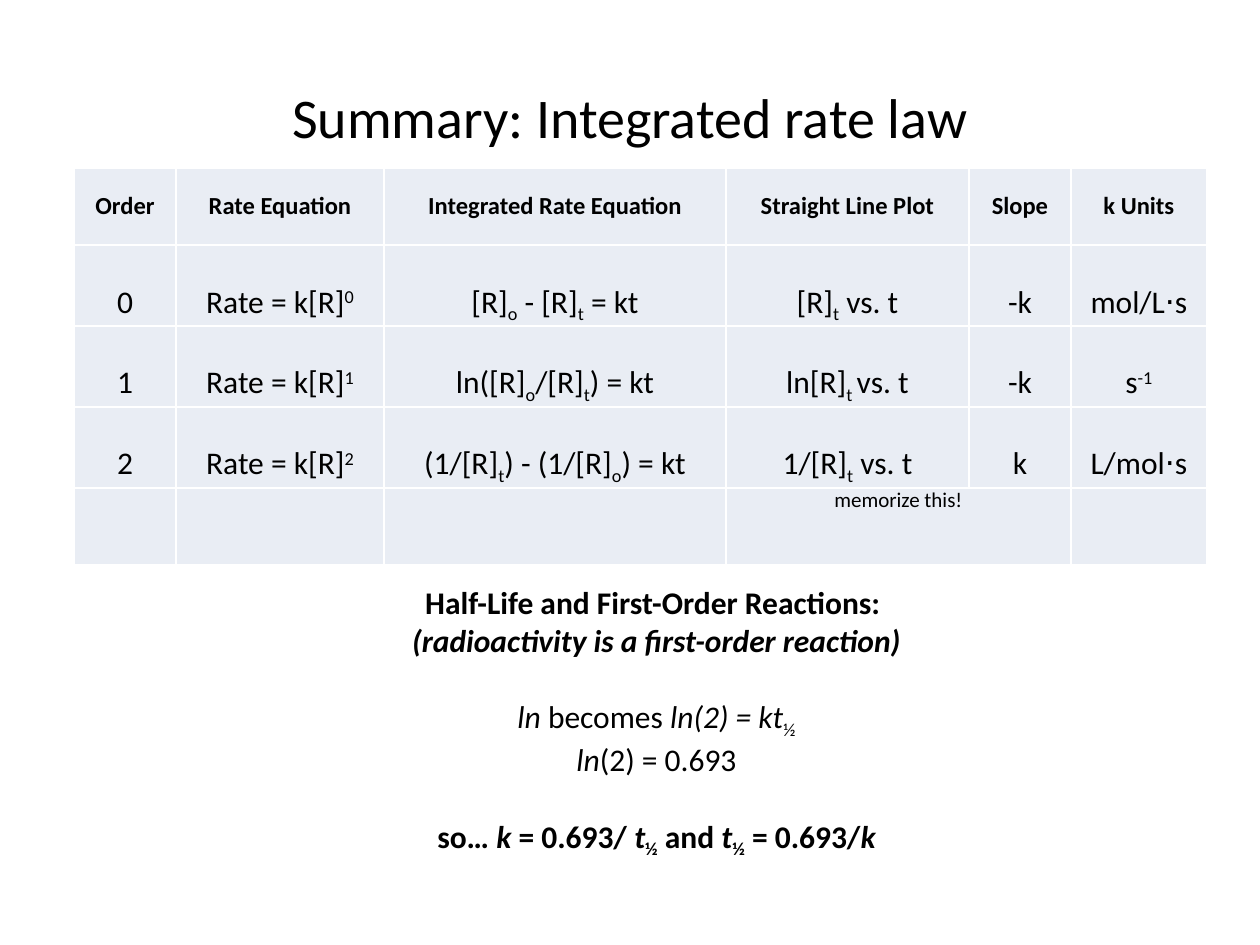
from dataclasses import dataclass
from typing import NamedTuple

from pptx import Presentation
from pptx.dml.color import RGBColor as Rgb
from pptx.enum.text import MSO_ANCHOR as Anchor, PP_ALIGN as Align
from pptx.util import Pt

SCALE = 914400 / 126


@dataclass(frozen=True)
class Theme:
    font: str = "Calibri"
    ink: Rgb = Rgb(0, 0, 0)
    cell: Rgb = Rgb(0xE9, 0xED, 0xF4)
    title: int = 32
    body: int = 18
    head: int = 14
    note: int = 12


class Run(NamedTuple):
    text: str
    shift: int = 0
    slant: bool = False


class Line(NamedTuple):
    runs: list[Run]
    bold: bool = False
    gap: int = 0


THEME = Theme()


def px(n: int) -> int:
    return round(n * SCALE)


def sub(text: str) -> Run:
    return Run(text, -25)


def sup(text: str) -> Run:
    return Run(text, 30)


def it(text: str) -> Run:
    return Run(text, slant=True)


def write(para, runs: list[Run], size: int, bold: bool = False) -> None:
    para.alignment = Align.CENTER
    font = para.font
    font.name, font.size, font.bold = THEME.font, Pt(size), bold
    font.color.rgb = THEME.ink
    for item in runs:
        run = para.add_run()
        run.text = item.text
        if item.slant:
            run.font.italic = True
        if item.shift:
            run.font._element.set("baseline", str(item.shift * 1000))


def fill_cell(cell, runs: list[Run], size: int, top: int = 0,
              bold: bool = False) -> None:
    cell.margin_left = cell.margin_right = px(9)
    cell.margin_top, cell.margin_bottom = px(top), 0
    write(cell.text_frame.paragraphs[0], runs, size, bold)


HEADS = ["Order", "Rate Equation", "Integrated Rate Equation",
         "Straight Line Plot", "Slope", "k Units"]
COLS = [102, 208, 342, 243, 102, 136]
ROWS = [77, 81, 81, 81, 77]

# Integrated equation, straight line plot, slope and units for each order
LAWS = [
    ([Run("[R]"), sub("o"), Run(" - [R]"), sub("t"), Run(" = kt")],
     [Run("[R]"), sub("t"), Run(" vs. t")],
     [Run("-k")], [Run("mol/L⋅s")]),
    ([Run("ln([R]"), sub("o"), Run("/[R]"), sub("t"), Run(") = kt")],
     [Run("ln[R]"), sub("t "), Run("vs. t")],
     [Run("-k")], [Run("s"), sup("-1")]),
    ([Run("(1/[R]"), sub("t"), Run(") - (1/[R]"), sub("o"), Run(") = kt")],
     [Run("1/[R]"), sub("t"), Run(" vs. t")],
     [Run("k")], [Run("L/mol⋅s")]),
]

HALF_LIFE = [
    Line([Run("Half-Life and First-Order Reactions: ")], bold=True),
    Line([it("(radioactivity is a first-order reaction)")], bold=True),
    Line([it("ln "), Run("becomes "), it("ln(2) = kt"), sub("½")], gap=22),
    Line([it("ln"), Run("(2) = 0.693")]),
    Line([Run("so… "), it("k"), Run(" = 0.693/"), it(" t"), sub("½"),
          Run(" and "), it("t"), sub("½"), Run(" = 0.693/"), it("k")],
         bold=True, gap=22),
]


def add_title(slide) -> None:
    title = slide.shapes.title
    title.left, title.top, title.width, title.height = map(
        px, (63, 38, 1134, 157))
    title.text_frame.vertical_anchor = Anchor.MIDDLE
    write(title.text_frame.paragraphs[0],
          [Run("Summary: Integrated rate law")], THEME.title)


def add_laws(slide) -> None:
    table = slide.shapes.add_table(
        len(ROWS), len(COLS), px(74), px(168), px(sum(COLS)),
        px(sum(ROWS))).table
    table.first_row = table.horz_banding = False
    for col, width in zip(table.columns, COLS):
        col.width = px(width)
    for row, height in zip(table.rows, ROWS):
        row.height = px(height)
    for cell in table.iter_cells():
        cell.fill.solid()
        cell.fill.fore_color.rgb = THEME.cell

    for c, head in enumerate(HEADS):
        cell = table.cell(0, c)
        cell.vertical_anchor = Anchor.MIDDLE
        fill_cell(cell, [Run(head)], THEME.head, bold=True)
    for order, law in enumerate(LAWS):
        rate = [Run("Rate = k[R]"), sup(str(order))]
        for c, runs in enumerate([[Run(str(order))], rate, *law]):
            fill_cell(table.cell(order + 1, c), runs, THEME.body, top=38)

    note = table.cell(4, 3)
    note.merge(table.cell(4, 4))
    fill_cell(note, [Run("memorize this!")], THEME.note)


def add_half_life(slide) -> None:
    frame = slide.shapes.add_textbox(
        px(168), px(577), px(977), px(318)).text_frame
    frame.word_wrap = True
    for n, line in enumerate(HALF_LIFE):
        para = frame.add_paragraph() if n else frame.paragraphs[0]
        para.space_before = Pt(line.gap)
        write(para, line.runs, THEME.body, line.bold)


def main() -> None:
    deck = Presentation()
    deck.slide_width, deck.slide_height = px(1260), px(945)
    slide = deck.slides.add_slide(deck.slide_layouts[5])
    add_title(slide)
    add_laws(slide)
    add_half_life(slide)
    deck.save("out.pptx")


if __name__ == "__main__":
    main()
